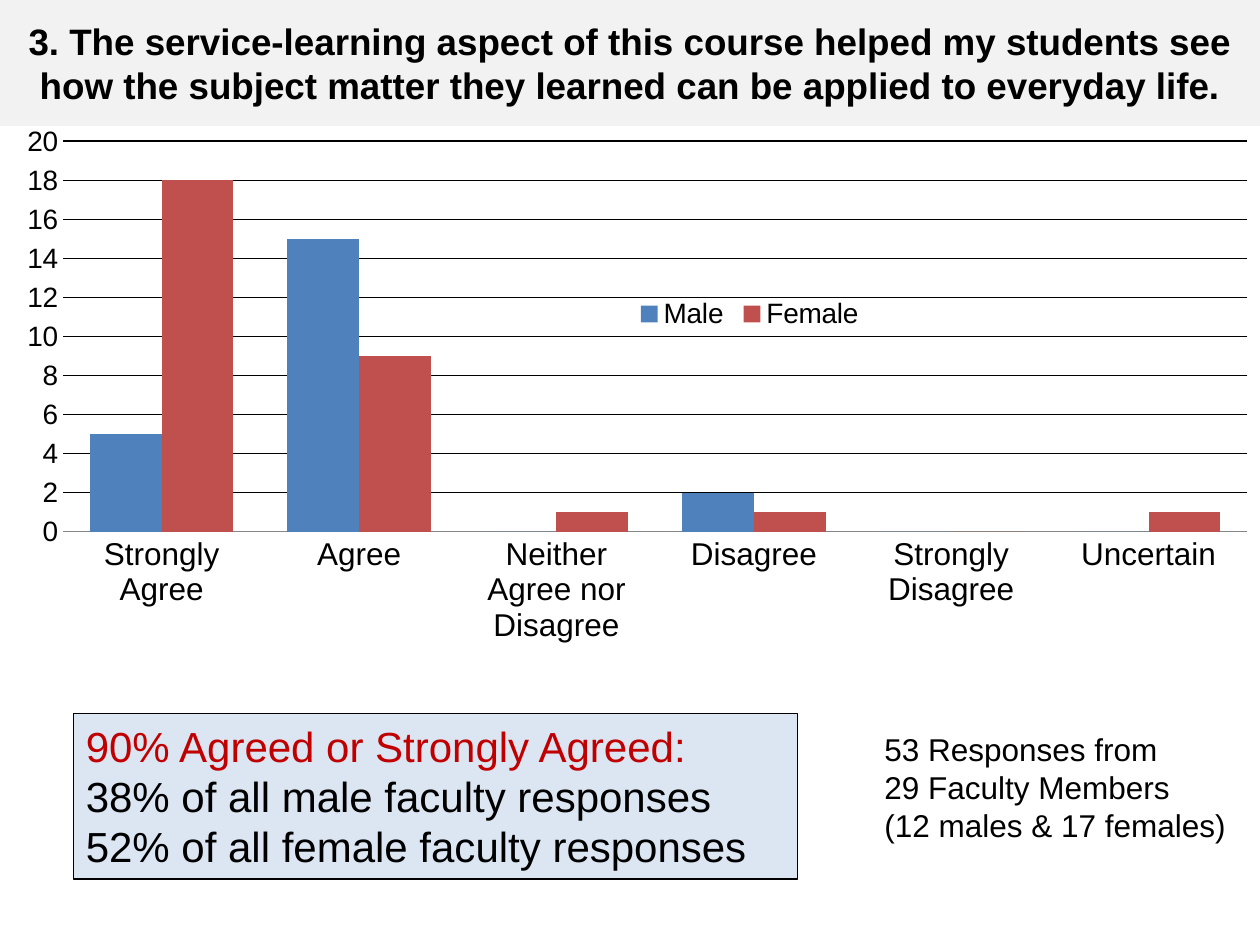
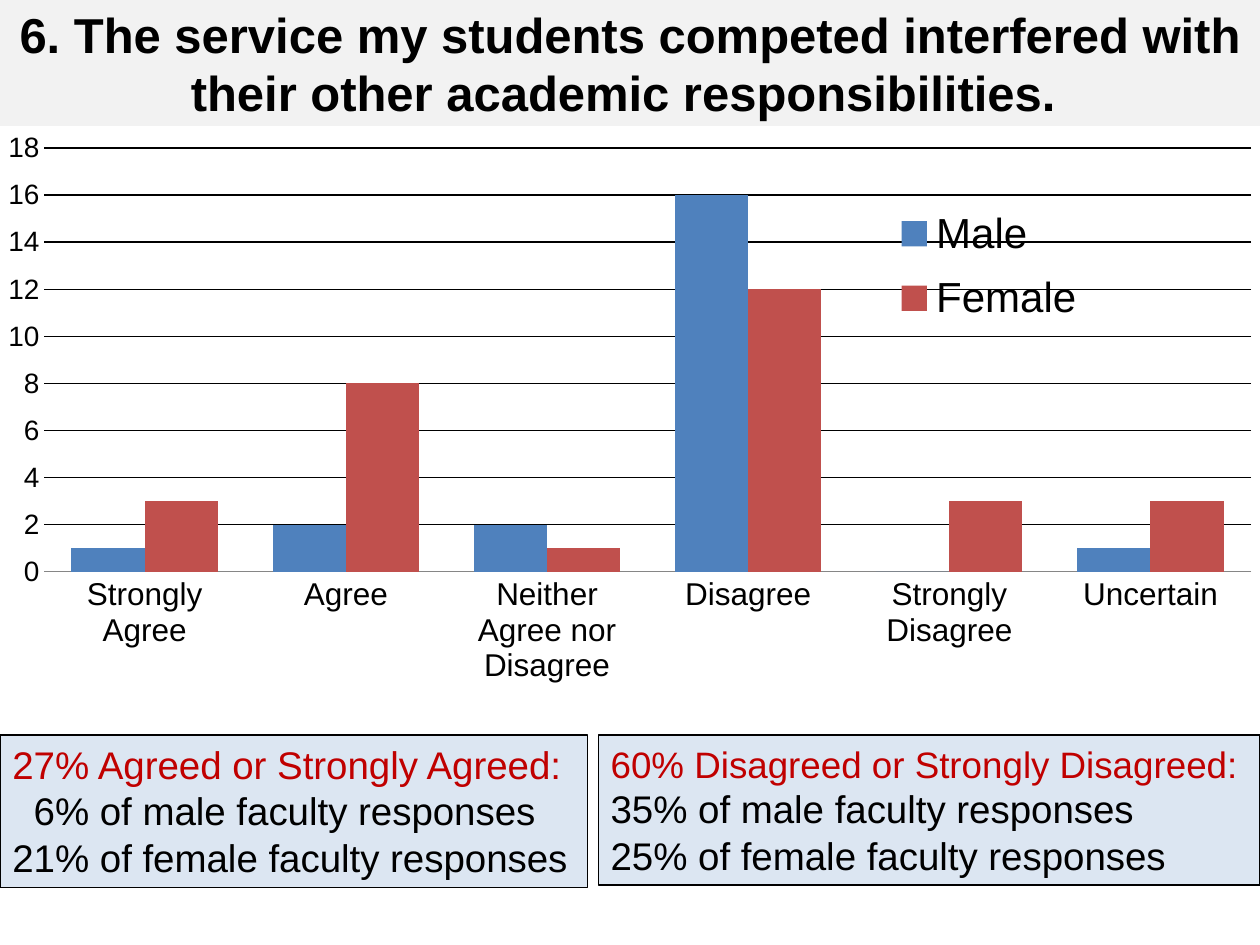
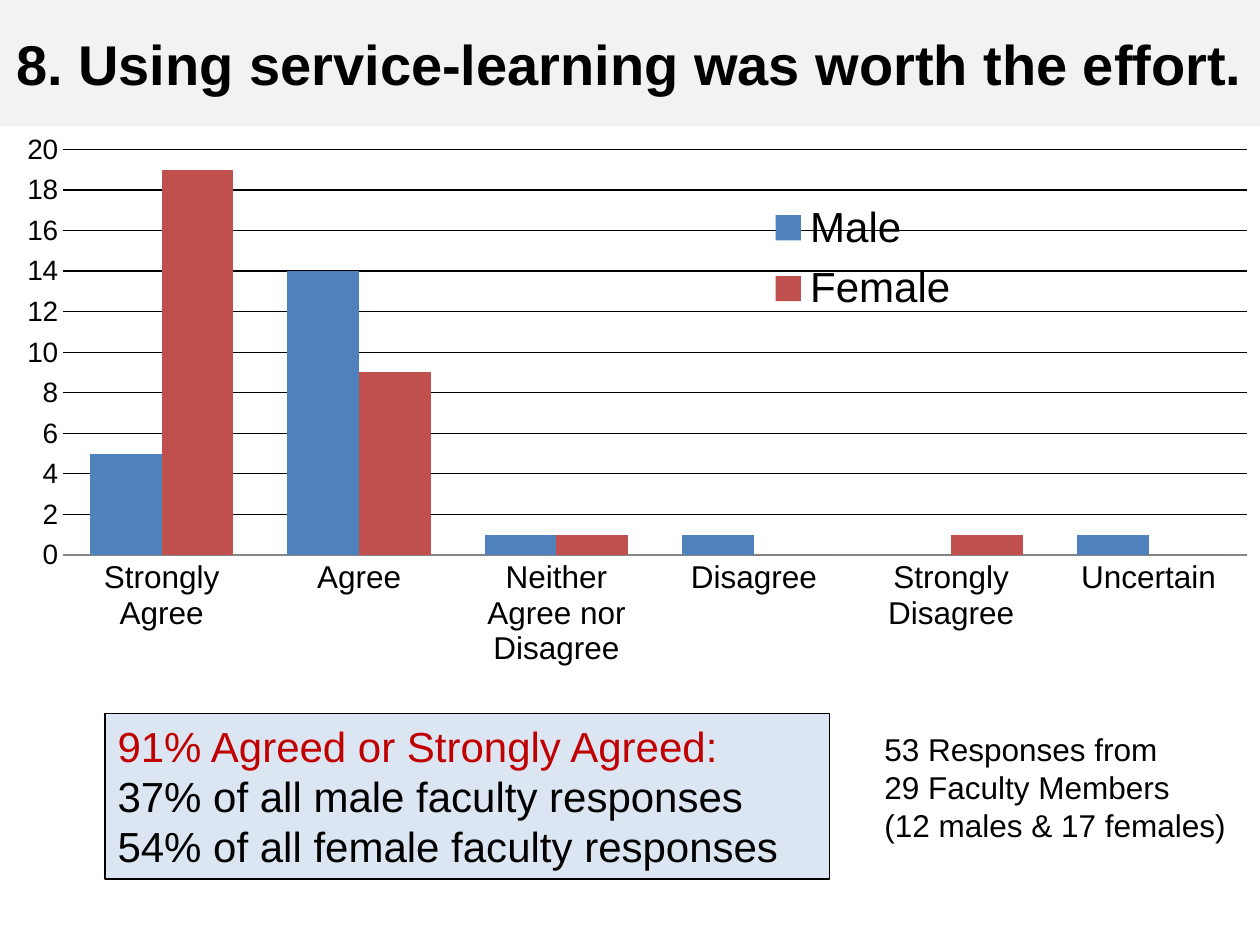
import pptx
import pptx.chart.data
import pptx.dml.color
import pptx.enum.chart
import pptx.enum.shapes
import pptx.enum.text
import pptx.oxml
import pptx.oxml.ns
import pptx.util
from pptx.util import Cm

COLOURS = {
    "band": "F2F2F2",
    "box": "DCE6F2",
    "text": "000000",
    "accent": "C00000",
    "axis": "868686",
    "Male": "4F81BD",
    "Female": "C0504D",
}
RGB = {key: pptx.dml.color.RGBColor.from_string(value) for key, value in COLOURS.items()}
FONT = "Arial"
ANSWERS = ["Strongly Agree", "Agree", "Neither Agree nor Disagree",
           "Disagree", "Strongly Disagree", "Uncertain"]
RESPONDENTS = ["53 Responses from ", "29 Faculty Members ", "(12 males & 17 females)"]

# Places are left, top, width, height: in cm on the slide, as fractions inside a chart
QUESTIONS = [
    {
        "title": "3. The service-learning aspect of this course helped my students see "
                 "how the subject matter they learned can be applied to everyday life.",
        "title_size": 21,
        "chart": (0, 2.33, 25.4, 12.91), "plot": (0.05, 0.04, 0.94, 0.61),
        "legend": (0.5, 0.28, 0.19, 0.06), "legend_size": 16, "top_value": 20,
        "Male": (5, 15, 0, 2, 0, 0), "Female": (18, 9, 1, 1, 0, 1),
        "findings": [((1.48, 14.39, 14.6, 3.33), 24, 24,
                      ["90% Agreed or Strongly Agreed:",
                       "38% of all male faculty responses",
                       "52% of all female faculty responses"])],
        "respondents": True,
    },
    {
        "title": "6. The service my students competed interfered with "
                 "their other academic responsibilities. ",
        "title_size": 28,
        "chart": (0, 2.54, 25.4, 12.28), "plot": (0.035, 0.036, 0.958, 0.696),
        "legend": (0.7, 0.11, 0.17, 0.24), "legend_size": 24, "top_value": 18,
        "Male": (1, 2, 2, 16, 0, 1), "Female": (3, 8, 1, 12, 3, 3),
        "findings": [((0, 14.82, 11.85, 3.07), 22, 22,
                      ["27% Agreed or Strongly Agreed:",
                       "6% of male faculty responses",
                       "21% of female faculty responses"]),
                     ((12.06, 14.82, 13.34, 3.02), 21, 22,
                      ["60% Disagreed or Strongly Disagreed:",
                       "35% of male faculty responses",
                       "25% of female faculty responses"])],
        "respondents": False,
    },
    {
        "title": "8. Using service-learning was worth the effort. ",
        "title_size": 32,
        "chart": (0, 2.54, 25.4, 11.85), "plot": (0.05, 0.04, 0.94, 0.69),
        "legend": (0.6, 0.11, 0.17, 0.23), "legend_size": 24, "top_value": 20,
        "Male": (5, 14, 1, 1, 0, 1), "Female": (19, 9, 1, 0, 1, 0),
        "findings": [((2.12, 14.39, 14.6, 3.33), 24, 24,
                      ["91% Agreed or Strongly Agreed:",
                       "37% of all male faculty responses",
                       "54% of all female faculty responses"])],
        "respondents": True,
    },
]


def set_font(font, size, colour="text", bold=False):
    font.name = FONT
    font.size = pptx.util.Pt(size)
    font.bold = bold
    font.color.rgb = RGB[colour]


def place_in_chart(part, index, place, target=""):
    for old in part.findall(pptx.oxml.ns.qn("c:layout")):
        part.remove(old)
    x, y, w, h = place
    part.insert(index, pptx.oxml.parse_xml(
        f'<c:layout {pptx.oxml.ns.nsdecls("c")}><c:manualLayout>{target}'
        '<c:xMode val="edge"/><c:yMode val="edge"/>'
        f'<c:x val="{x}"/><c:y val="{y}"/><c:w val="{w}"/><c:h val="{h}"/>'
        '</c:manualLayout></c:layout>'))


deck = pptx.Presentation()
deck.slide_width, deck.slide_height = Cm(25.4), Cm(19.05)

for question in QUESTIONS:
    slide = deck.slides.add_slide(deck.slide_layouts[6])

    # Answers by gender
    answers = pptx.chart.data.CategoryChartData()
    answers.categories = ANSWERS
    for gender in ("Male", "Female"):
        answers.add_series(gender, question[gender])
    chart = slide.shapes.add_chart(
        pptx.enum.chart.XL_CHART_TYPE.COLUMN_CLUSTERED,
        *map(Cm, question["chart"]), answers).chart
    chart.has_title = False
    set_font(chart.font, 16)
    columns = chart.plots[0]
    columns.gap_width = 75
    columns.overlap = 0
    columns.vary_by_categories = False
    for series in columns.series:
        series.format.fill.solid()
        series.format.fill.fore_color.rgb = RGB[series.name]
    place_in_chart(chart._chartSpace.chart.plotArea, 0, question["plot"],
                   '<c:layoutTarget val="inner"/>')

    # Axes
    for axis, size in ((chart.category_axis, 18), (chart.value_axis, 16)):
        axis.major_tick_mark = pptx.enum.chart.XL_TICK_MARK.NONE
        axis.minor_tick_mark = pptx.enum.chart.XL_TICK_MARK.NONE
        set_font(axis.tick_labels.font, size)
    chart.category_axis.format.line.color.rgb = RGB["axis"]
    counts = chart.value_axis
    counts.minimum_scale, counts.maximum_scale = 0, question["top_value"]
    counts.major_unit = 2
    counts.format.line.fill.background()
    counts.major_gridlines.format.line.color.rgb = RGB["text"]
    counts.major_gridlines.format.line.width = pptx.util.Pt(0.75)

    # Legend
    chart.has_legend = True
    chart.legend.position = pptx.enum.chart.XL_LEGEND_POSITION.BOTTOM
    chart.legend.include_in_layout = False
    set_font(chart.legend.font, question["legend_size"])
    place_in_chart(chart.legend._element, 1, question["legend"])

    # Title band
    band = slide.shapes.add_shape(pptx.enum.shapes.MSO_SHAPE.RECTANGLE,
                                  0, 0, deck.slide_width, Cm(2.54))
    band.shadow.inherit = False
    band.fill.solid()
    band.fill.fore_color.rgb = RGB["band"]
    band.line.fill.background()
    band.text_frame.word_wrap = True
    band.text_frame.vertical_anchor = pptx.enum.text.MSO_ANCHOR.MIDDLE
    heading = band.text_frame.paragraphs[0]
    heading.text = question["title"]
    heading.alignment = pptx.enum.text.PP_ALIGN.CENTER
    set_font(heading.font, question["title_size"], bold=True)

    # Findings, with the summary line in the accent colour
    for place, summary_size, detail_size, lines in question["findings"]:
        finding = slide.shapes.add_shape(pptx.enum.shapes.MSO_SHAPE.RECTANGLE,
                                         *map(Cm, place))
        finding.shadow.inherit = False
        finding.fill.solid()
        finding.fill.fore_color.rgb = RGB["box"]
        finding.line.color.rgb = RGB["text"]
        finding.line.width = pptx.util.Pt(0.75)
        frame = finding.text_frame
        frame.word_wrap = True
        frame.auto_size = pptx.enum.text.MSO_AUTO_SIZE.SHAPE_TO_FIT_TEXT
        frame.vertical_anchor = pptx.enum.text.MSO_ANCHOR.TOP
        for number, line in enumerate(lines):
            paragraph = frame.add_paragraph() if number else frame.paragraphs[0]
            paragraph.text = line
            paragraph.alignment = pptx.enum.text.PP_ALIGN.LEFT
            if number:
                set_font(paragraph.font, detail_size)
            else:
                set_font(paragraph.font, summary_size, "accent")
            # One-digit percentages line up with two-digit ones
            if line[1] == "%":
                paragraph._p.get_or_add_pPr().set("marL", str(Cm(0.43)))

    # Respondents
    if question["respondents"]:
        respondents = slide.shapes.add_textbox(Cm(17.58), Cm(14.6), Cm(7.82), Cm(2.57))
        respondents.text_frame.word_wrap = True
        respondents.text_frame.auto_size = pptx.enum.text.MSO_AUTO_SIZE.SHAPE_TO_FIT_TEXT
        paragraph = respondents.text_frame.paragraphs[0]
        set_font(paragraph.font, 18)
        for number, line in enumerate(RESPONDENTS):
            if number:
                paragraph.add_line_break()
            paragraph.add_run().text = line

deck.save("out.pptx")
